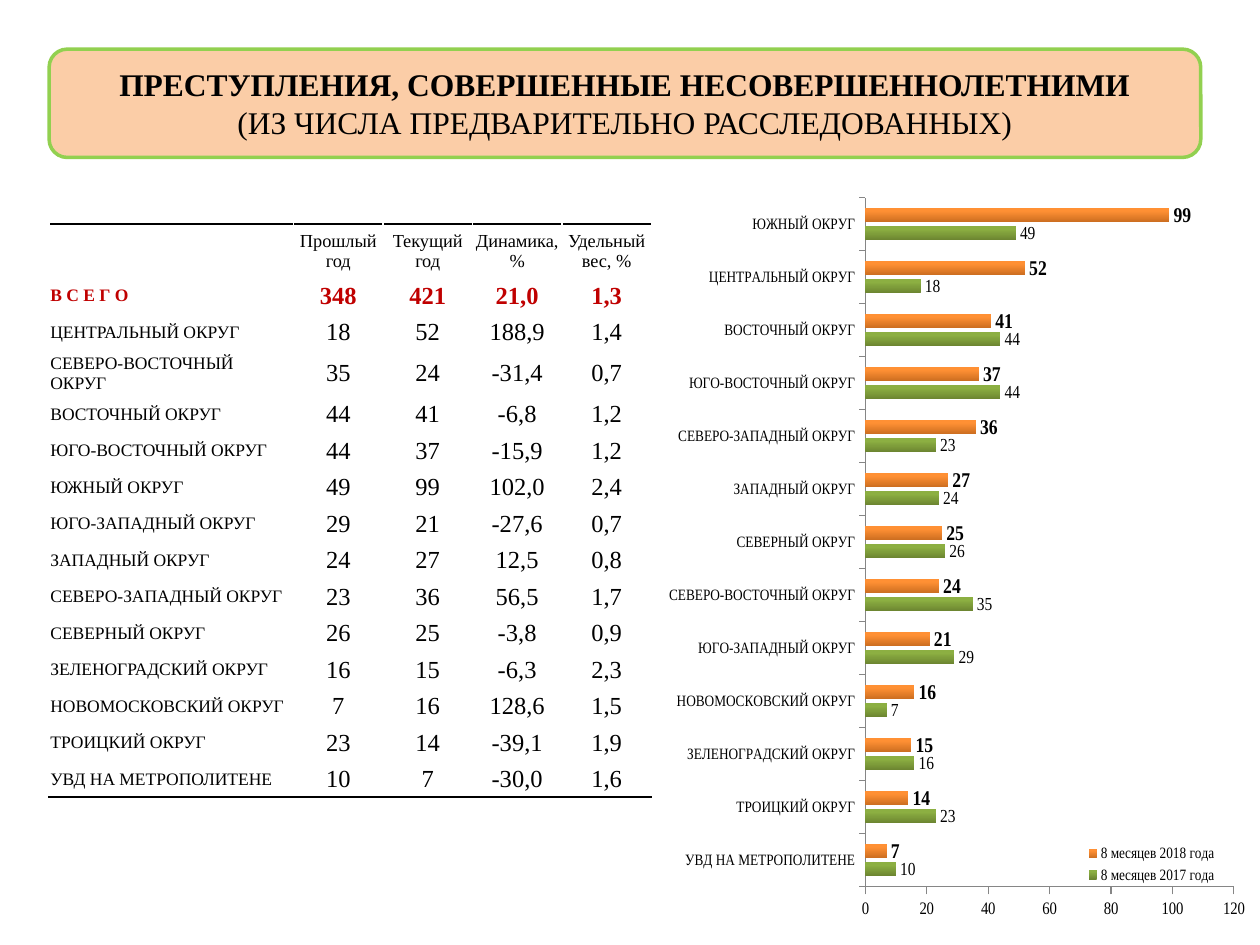
from lxml import etree
from pptx import Presentation
from pptx.chart.data import CategoryChartData
from pptx.dml.color import RGBColor
from pptx.enum.chart import XL_CHART_TYPE, XL_LABEL_POSITION, XL_LEGEND_POSITION, XL_TICK_MARK
from pptx.enum.shapes import MSO_SHAPE
from pptx.enum.text import MSO_ANCHOR, PP_ALIGN
from pptx.oxml import parse_xml
from pptx.oxml.ns import nsdecls, qn
from pptx.util import Inches, Pt

FONT = "Times New Roman"
TITLE = [("ПРЕСТУПЛЕНИЯ, СОВЕРШЕННЫЕ НЕСОВЕРШЕННОЛЕТНИМИ", True),
         ("(ИЗ ЧИСЛА ПРЕДВАРИТЕЛЬНО РАССЛЕДОВАННЫХ)", False)]
HEADER = ("", "Прошлый год", "Текущий год", "Динамика, %", "Удельный вес, %")
TOTAL = ("В С Е Г О", 348, 421, "21,0", "1,3")
DISTRICTS = [
    ("ЦЕНТРАЛЬНЫЙ ОКРУГ", 18, 52, "188,9", "1,4"),
    ("СЕВЕРО-ВОСТОЧНЫЙ ОКРУГ", 35, 24, "-31,4", "0,7"),
    ("ВОСТОЧНЫЙ ОКРУГ", 44, 41, "-6,8", "1,2"),
    ("ЮГО-ВОСТОЧНЫЙ ОКРУГ", 44, 37, "-15,9", "1,2"),
    ("ЮЖНЫЙ ОКРУГ", 49, 99, "102,0", "2,4"),
    ("ЮГО-ЗАПАДНЫЙ ОКРУГ", 29, 21, "-27,6", "0,7"),
    ("ЗАПАДНЫЙ ОКРУГ", 24, 27, "12,5", "0,8"),
    ("СЕВЕРО-ЗАПАДНЫЙ ОКРУГ", 23, 36, "56,5", "1,7"),
    ("СЕВЕРНЫЙ ОКРУГ", 26, 25, "-3,8", "0,9"),
    ("ЗЕЛЕНОГРАДСКИЙ ОКРУГ", 16, 15, "-6,3", "2,3"),
    ("НОВОМОСКОВСКИЙ ОКРУГ", 7, 16, "128,6", "1,5"),
    ("ТРОИЦКИЙ ОКРУГ", 23, 14, "-39,1", "1,9"),
    ("УВД НА МЕТРОПОЛИТЕНЕ", 10, 7, "-30,0", "1,6"),
]
SERIES = [
    dict(name="8 месяцев 2017 года", column=1, dark="6B8430", light="8CAF42", size=10.5, bold=False),
    dict(name="8 месяцев 2018 года", column=2, dark="CC6E20", light="FF9034", size=12, bold=True),
]
LEFT = 0.39


def rgb(value):
    return RGBColor.from_string(value)


def set_font(font, size, color="000000", bold=False):
    font.name, font.size, font.bold = FONT, Pt(size), bold
    font.color.rgb = rgb(color)


def write(p, text, align=PP_ALIGN.CENTER, **fmt):
    p.alignment = align
    r = p.add_run()
    r.text = str(text)
    set_font(r.font, **fmt)


def rule(cell, side):
    ln = parse_xml(f'<a:{side} {nsdecls("a")} w="{Pt(1.5)}"><a:solidFill>'
                   f'<a:srgbClr val="000000"/></a:solidFill></a:{side}>')
    cell._tc.get_or_add_tcPr().insert(0, ln)


def manual_layout(x, y, w, h, inner=False):
    layout = etree.Element(qn("c:layout"))
    manual = etree.SubElement(layout, qn("c:manualLayout"))
    items = [("layoutTarget", "inner")] if inner else []
    items += [("xMode", "edge"), ("yMode", "edge"), ("x", x), ("y", y), ("w", w), ("h", h)]
    for tag, val in items:
        etree.SubElement(manual, qn(f"c:{tag}")).set("val", str(val))
    return layout


def add_title(s):
    sp = s.shapes.add_shape(MSO_SHAPE.ROUNDED_RECTANGLE, Inches(LEFT), Inches(LEFT),
                            Inches(9.14), Inches(0.86))
    sp.shadow.inherit = False
    sp.fill.solid()
    sp.fill.fore_color.rgb = rgb("FBCDA7")
    sp.line.color.rgb = rgb("92D050")
    sp.line.width = Pt(2)
    tf = sp.text_frame
    tf.word_wrap = True
    tf.vertical_anchor = MSO_ANCHOR.MIDDLE
    for i, (text, bold) in enumerate(TITLE):
        p = tf.add_paragraph() if i else tf.paragraphs[0]
        write(p, text, size=18, bold=bold)


def add_district_table(s):
    rows = [HEADER, TOTAL] + DISTRICTS
    widths = [1.94] + [0.71] * 4
    heights = [0.42, 0.29, 0.29, 0.36] + [0.29] * (len(rows) - 4)
    table = s.shapes.add_table(len(rows), len(widths), Inches(LEFT), Inches(1.78),
                               Inches(sum(widths)), Inches(sum(heights))).table
    table.first_row = table.horz_banding = False
    for column, w in zip(table.columns, widths):
        column.width = Inches(w)
    for i, (values, h) in enumerate(zip(rows, heights)):
        table.rows[i].height = Inches(h)
        for j, value in enumerate(values):
            cell = table.cell(i, j)
            cell.margin_left = cell.margin_top = cell.margin_right = Inches(0.01)
            cell.margin_bottom = 0
            cell.vertical_anchor = MSO_ANCHOR.MIDDLE
            cell.fill.solid()
            cell.fill.fore_color.rgb = rgb("FFFFFF")
            if value != "":
                total = values is TOTAL
                write(cell.text_frame.paragraphs[0], value,
                      align=PP_ALIGN.CENTER if j or i == 0 else PP_ALIGN.LEFT,
                      size=10.5 if i == 0 else 14 if j else 10,
                      color="C00000" if total else "000000", bold=total)
            if i == 0:
                rule(cell, "lnT")
            if i == len(rows) - 1:
                rule(cell, "lnB")


def add_district_chart(s):
    ranked = sorted(DISTRICTS, key=lambda row: row[2])
    data = CategoryChartData()
    data.categories = [row[0] for row in ranked]
    for item in SERIES:
        data.add_series(item["name"], [row[item["column"]] for row in ranked])
    chart = s.shapes.add_chart(XL_CHART_TYPE.BAR_CLUSTERED, Inches(5.31), Inches(1.39),
                               Inches(4.57), Inches(6.01), data).chart
    set_font(chart.font, 10)
    chart.has_title = False

    plot = chart.plots[0]
    plot.gap_width, plot.overlap, plot.vary_by_categories = 150, -31, False
    for series, item in zip(plot.series, SERIES):
        fill = series.format.fill
        fill.gradient()
        fill.gradient_angle = 90
        for stop, color, position in zip(fill.gradient_stops, (item["dark"], item["light"]), (0, 0.8)):
            stop.color.rgb = rgb(color)
            stop.position = position
        labels = series.data_labels
        labels.show_value = True
        labels.position = XL_LABEL_POSITION.OUTSIDE_END
        set_font(labels.font, item["size"], bold=item["bold"])

    for axis, size in ((chart.category_axis, 9), (chart.value_axis, 10)):
        axis.has_major_gridlines = False
        axis.major_tick_mark = XL_TICK_MARK.OUTSIDE
        axis.minor_tick_mark = XL_TICK_MARK.NONE
        axis.format.line.color.rgb = rgb("868686")
        set_font(axis.tick_labels.font, size)
    axis = chart.value_axis
    axis.minimum_scale, axis.maximum_scale, axis.major_unit = 0, 120, 20

    chart.has_legend = True
    legend = chart.legend
    legend.position = XL_LEGEND_POSITION.RIGHT
    legend.include_in_layout = False
    set_font(legend.font, 9)
    area = chart._chartSpace.chart.plotArea
    for parent in (area, legend._element):
        for old in parent.findall(qn("c:layout")):
            parent.remove(old)
    area.insert(0, manual_layout(0.22, 0.03, 0.76, 0.91, inner=True))
    legend._element.find(qn("c:legendPos")).addnext(manual_layout(0.67, 0.88, 0.28, 0.06))


def main():
    prs = Presentation()
    prs.slide_width, prs.slide_height = Inches(10), Inches(7.5)
    s = prs.slides.add_slide(prs.slide_layouts[6])
    add_title(s)
    add_district_table(s)
    add_district_chart(s)
    prs.save("out.pptx")


if __name__ == "__main__":
    main()
